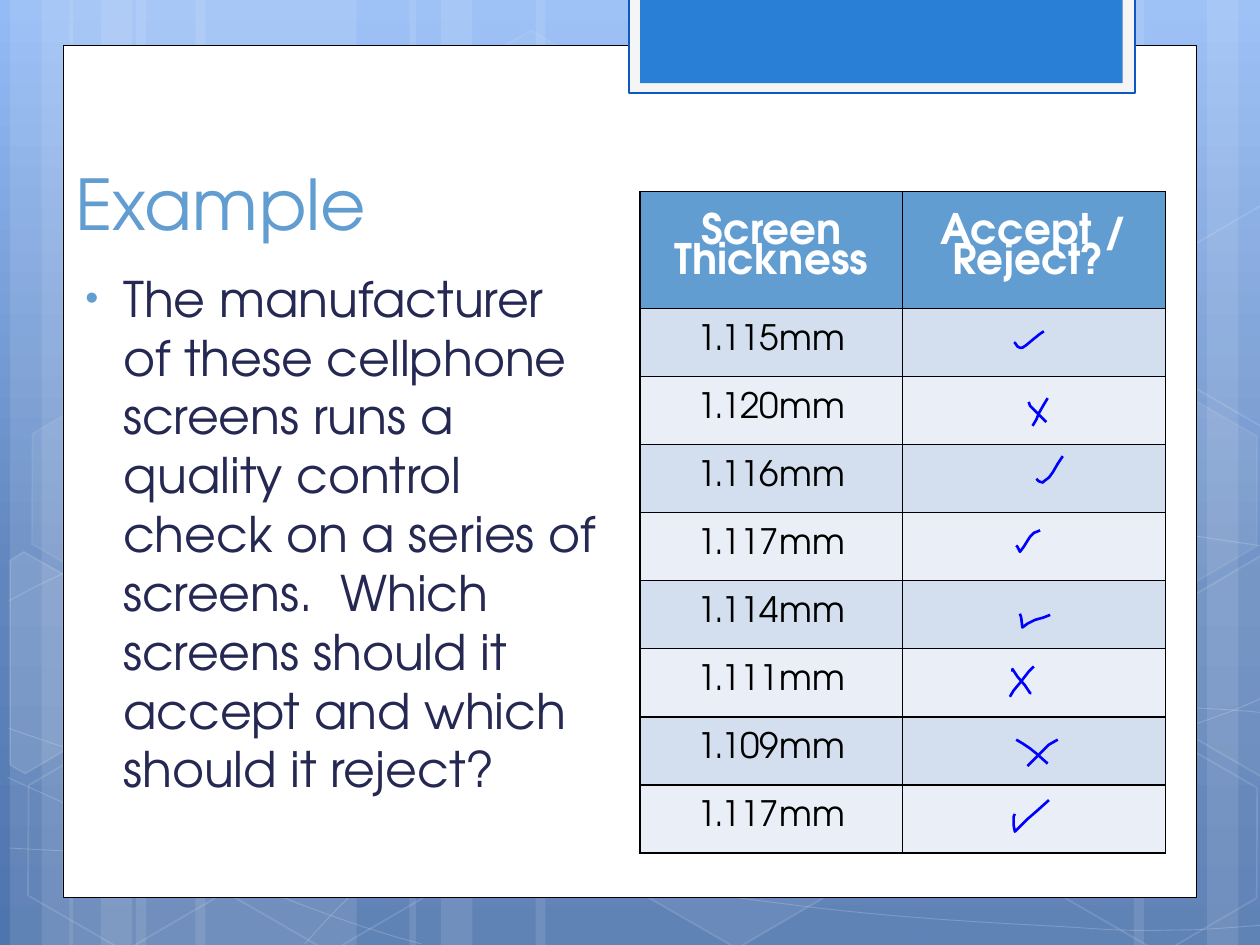
from copy import deepcopy

from lxml import etree
from pptx import Presentation
from pptx import util as u
from pptx.dml.color import RGBColor
from pptx.enum import shapes, text
from pptx.oxml.ns import qn

COLORS = {
    "white": "FFFFFF", "black": "000000", "accent": "629DD1", "body": "242852",
    "tab": "297FD5", "tab_frame": "F5F5F5", "tab_edge": "0E58C4", "ink": "0000FF",
    "band_dark": "D3DFEE", "band_light": "EAEFF7",
    "sky_top": "93BBF6", "sky_middle": "6186BE", "sky_bottom": "4F75AE",
}
FONT = "TeX Gyre Adventor"
COLUMNS, ROWS = 1000, 750
UNIT = u.Inches(10) // COLUMNS

BARS = [(108, 175), (8, 50), (33, 83), (155, 175), (55, 50), (80, 83), (733, 175),
        (958, 50), (900, 83), (425, 308), (325, 50), (350, 83)]
CURVES = [
    [(7, 673), (61, 676), (115, 679), (190, 678), (265, 677), (358, 675), (458, 665),
     (558, 655), (700, 636), (792, 617), (883, 598), (977, 568), (1007, 551)],
    [(7, 477), (36, 461), (65, 446), (121, 431), (178, 416), (259, 394), (347, 387),
     (436, 380), (544, 379), (654, 387), (764, 395), (947, 426), (1007, 434)],
    [(6, 617), (127, 672), (247, 727), (334, 749)],
    [(7, 578), (38, 589), (70, 600), (128, 616), (186, 631), (273, 656), (357, 673),
     (440, 690), (545, 708), (628, 718), (711, 729), (800, 733), (853, 736),
     (905, 740), (919, 738), (945, 738), (971, 737), (989, 735), (1007, 734)],
    [(242, 749), (260, 729), (278, 709), (302, 691), (326, 673), (360, 653), (388, 639),
     (416, 625), (433, 619), (470, 609), (506, 599), (573, 585), (608, 578),
     (644, 571), (649, 571), (680, 569), (711, 566), (760, 563), (794, 562),
     (829, 561), (886, 562), (953, 562), (971, 563), (988, 564), (1006, 566)],
]
HEXAGONS = [(334, 36, 4, 8), (497, 589, 6, 12), (11, 591, 0, 12), (14, 312, 7, 8),
            (174, 592, 0, 12), (753, 453, 10, 12), (834, 593, 0, 12), (834, 314, 7, 8)]
CUT_HEXAGONS = [
    ([(8, 445), (19, 438), (96, 482), (95, 570), (20, 614), (8, 607)], 10),
    ([(926, 485), (1001, 441), (1009, 446), (1009, 613), (1002, 617), (926, 573)], 4),
    ([(926, 207), (1001, 163), (1010, 168), (1009, 335), (1002, 339), (926, 295)], 0),
]
MEASUREMENTS = [
    ("1.115mm", [[(89, 28), (89, 27), (91, 30), (93, 31), (95, 31), (98, 29),
                  (104, 24), (109, 20), (112, 18)]]),
    ("1.120mm", [[(100, 20), (101, 23), (105, 27), (110, 32), (114, 36)],
                 [(115, 17), (112, 22), (108, 29), (106, 34), (103, 39)]]),
    ("1.116mm", [[(106, 27), (108, 29), (111, 30), (112, 29), (116, 26), (119, 22),
                  (123, 15), (127, 9)]]),
    ("1.117mm", [[(90, 26), (91, 27), (93, 31), (96, 27), (101, 19), (104, 16), (109, 14)]]),
    ("1.114mm", [[(93, 26), (94, 29), (95, 37), (99, 34), (105, 31), (112, 29), (117, 27)]]),
    ("1.111mm", [[(87, 18), (87, 16), (91, 22), (97, 29), (101, 35), (102, 35)],
                 [(104, 14), (100, 18), (93, 27), (88, 33), (85, 38)]]),
    ("1.109mm", [[(90, 18), (95, 21), (101, 25), (106, 29), (115, 37)],
                 [(123, 18), (116, 22), (108, 30), (99, 39)]]),
    ("1.117mm", [[(89, 23), (88, 25), (88, 32), (89, 37), (91, 35), (99, 27),
                  (106, 21), (116, 12)]]),
]


def grid(*cells):
    """Turn grid counts into lengths."""
    return [u.Emu(round(cell * UNIT)) for cell in cells]


def color(name):
    """Look up a named colour."""
    return RGBColor.from_string(COLORS[name])


def paint(shape, fill=None, line=None, width=1, fill_alpha=100, line_alpha=100):
    """Set fill, outline and their opacity in percent."""
    shape.shadow.inherit = False
    for target, name in ((shape.fill, fill), (shape.line.fill, line)):
        if name:
            target.solid()
            target.fore_color.rgb = color(name)
        else:
            target.background()
    if line:
        shape.line.width = u.Pt(width)
    properties = shape.element.spPr
    for parent, alpha in ((properties, fill_alpha), (properties.find(qn("a:ln")), line_alpha)):
        tint = parent.find(f"{qn('a:solidFill')}/{qn('a:srgbClr')}")
        if tint is not None and alpha < 100:
            etree.SubElement(tint, qn("a:alpha"), val=str(alpha * 1000))


def add_preset(page, kind, box, **look):
    """Add a painted preset shape in a grid box."""
    shape = page.shapes.add_shape(kind, *grid(*box))
    paint(shape, **look)
    return shape


def add_path(page, points, origin=(0, 0), close=False, **look):
    """Draw a painted path through grid points measured from an origin."""
    places = [grid(origin[0] + x, origin[1] + y) for x, y in points]
    builder = page.shapes.build_freeform(*places[0], scale=1.0)
    builder.add_line_segments(places[1:], close=close)
    paint(builder.convert_to_shape(), **look)


def bezier(controls, steps=12):
    """Sample a chain of cubic curves."""
    points = [controls[0]]
    for start in range(0, len(controls) - 1, 3):
        a, b, c, d = controls[start:start + 4]
        for step in range(1, steps + 1):
            t = step / steps
            s = 1 - t
            points.append(tuple(s**3 * a[i] + 3 * s * s * t * b[i] + 3 * s * t * t * c[i]
                                + t**3 * d[i] for i in (0, 1)))
    return points


def write(frame, words, size, name, bold=False, align=None, anchor=None, spacing=None):
    """Write one formatted paragraph and return it."""
    frame.word_wrap = True
    if anchor is not None:
        frame.vertical_anchor = anchor
    para = frame.paragraphs[0]
    para.alignment = align
    para.line_spacing = spacing
    span = para.add_run()
    span.text = words
    span.font.name, span.font.size, span.font.bold = FONT, u.Pt(size), bold
    span.font.color.rgb = color(name)
    return para


def draw_sky(page):
    """Fill the background with a vertical three-stop gradient."""
    fill = page.background.fill
    fill.gradient()
    fill.gradient_angle = 270
    stops = page.element.find(f".//{qn('a:gsLst')}")
    stops.append(deepcopy(stops[-1]))
    for stop, (position, name) in zip(fill.gradient_stops, (
            (0, "sky_top"), (0.62, "sky_middle"), (1, "sky_bottom"))):
        stop.position = position
        stop.color.rgb = color(name)


def draw_pattern(page, box):
    """Draw translucent bars, curves and hexagons in a box."""
    left, top, _, height = box
    for offset, width in BARS:
        add_preset(page, shapes.MSO_SHAPE.RECTANGLE, (left + offset, top, width, height),
                   fill="white", fill_alpha=10)
    for controls in CURVES:
        add_path(page, bezier(controls), (left, top), line="white", width=0.5, line_alpha=20)
    for x, y, alpha, edge in HEXAGONS:
        hexagon = add_preset(page, shapes.MSO_SHAPE.HEXAGON, (left + x, top + y, 175, 152),
                             fill="white" if alpha else None, fill_alpha=alpha,
                             line="white", line_alpha=edge)
        hexagon.adjustments[0] = 0.285
        hexagon.rotation = 30
    for points, alpha in CUT_HEXAGONS:
        add_path(page, points, (left, top), close=True, fill="white" if alpha else None,
                 fill_alpha=alpha, line="white", line_alpha=12)


def draw_card(page, box):
    """Draw the white card with its blue tab."""
    left, top, width, height = box
    kind = shapes.MSO_SHAPE.RECTANGLE
    add_preset(page, kind, box, fill="white", line="black", width=0.5)
    add_preset(page, kind, (left + 449, top - 38, 402, 76),
               fill="tab_frame", line="tab_edge", width=1.25)
    add_preset(page, kind, (left + 458, top - 38, 383, 68), fill="tab")


def draw_title(page, box):
    """Write the title at the foot of its box."""
    frame = page.shapes.add_textbox(*grid(*box)).text_frame
    write(frame, "Example", 40, "accent", anchor=text.MSO_ANCHOR.BOTTOM)


def draw_question(page, box):
    """Write the bulleted question."""
    frame = page.shapes.add_textbox(*grid(*box)).text_frame
    para = write(frame, "The manufacturer of these cellphone screens runs a quality control "
                 "check on a series of screens.  Which screens should it accept and which "
                 "should it reject?", 28, "body")
    properties = para._p.get_or_add_pPr()
    properties.set("marL", str(u.Inches(0.38)))
    properties.set("indent", str(u.Inches(-0.3)))
    bullet_color = etree.SubElement(properties, qn("a:buClr"))
    etree.SubElement(bullet_color, qn("a:srgbClr"), val=COLORS["accent"])
    etree.SubElement(properties, qn("a:buSzPct"), val="76000")
    etree.SubElement(properties, qn("a:buFont"), typeface="Arial")
    etree.SubElement(properties, qn("a:buChar"), char="•")


def style_cell(cell, fill, words="", **look):
    """Fill and border a cell, with centred words if any."""
    properties = cell._tc.get_or_add_tcPr()
    for side in ("lnL", "lnR", "lnT", "lnB"):
        border = etree.SubElement(properties, qn(f"a:{side}"), w=str(u.Pt(1)))
        ink = etree.SubElement(border, qn("a:solidFill"))
        etree.SubElement(ink, qn("a:srgbClr"), val=COLORS["black"])
    cell.fill.solid()
    cell.fill.fore_color.rgb = color(fill)
    if words:
        cell.vertical_anchor = text.MSO_ANCHOR.MIDDLE
        write(cell.text_frame, words, align=text.PP_ALIGN.CENTER, spacing=0.77, **look)


def draw_results(page, box, header=93):
    """Build the thickness table and ink a mark in each result cell."""
    left, top, width, height = box
    pitch = (height - header) / len(MEASUREMENTS)
    table = page.shapes.add_table(len(MEASUREMENTS) + 1, 2, *grid(*box)).table
    for column, words in enumerate(("Screen Thickness", "Accept / Reject? ")):
        table.columns[column].width = grid(width / 2)[0]
        style_cell(table.cell(0, column), "accent", words, size=24, name="white", bold=True)
    table.rows[0].height = grid(header)[0]
    for row, (reading, strokes) in enumerate(MEASUREMENTS):
        table.rows[row + 1].height = grid(pitch)[0]
        band = "band_light" if row % 2 else "band_dark"
        style_cell(table.cell(row + 1, 0), band, reading, size=20, name="black")
        style_cell(table.cell(row + 1, 1), band)
        origin = (left + width / 2, top + header + row * pitch)
        for points in strokes:
            add_path(page, points, origin, line="ink", width=1.5)


def main():
    """Build and save the slide."""
    deck = Presentation()
    deck.slide_width, deck.slide_height = grid(COLUMNS, ROWS)
    page = deck.slides.add_slide(deck.slide_layouts[6])
    draw_sky(page)
    draw_pattern(page, (0, 0, COLUMNS, ROWS))
    draw_card(page, (50, 36, 900, 676))
    draw_title(page, (50, 74, 900, 125))
    draw_question(page, (50, 208, 438, 508))
    draw_results(page, (508, 152, 417, 525))
    deck.save("out.pptx")


if __name__ == "__main__":
    main()
